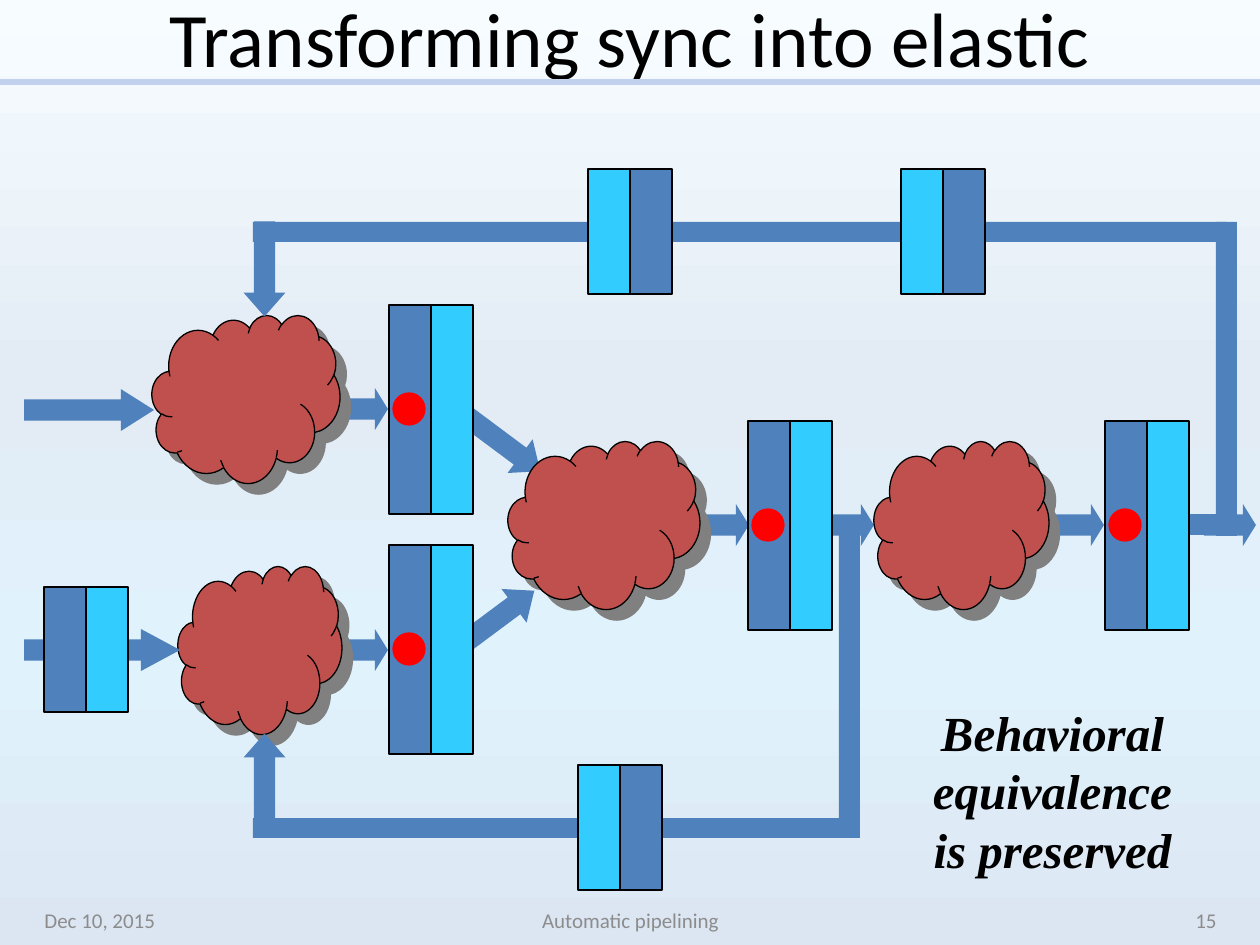
"""Build the slide on transforming a synchronous pipeline into an elastic one."""
from lxml.etree import SubElement
from pptx import Presentation
from pptx.dml.color import RGBColor
from pptx.enum.shapes import MSO_CONNECTOR, MSO_SHAPE as SHAPE
from pptx.enum.text import MSO_ANCHOR as ANCHOR, MSO_AUTO_SIZE as AUTO, PP_ALIGN as ALIGN
from pptx.oxml.ns import qn
from pptx.util import Pt

PX = 914400 / 126
COLORS = {"pipe": "4F81BD", "light": "33CCFF", "cloud": "C0504D", "token": "FF0000",
          "shadow": "808080", "rule": "C2D1ED", "text": "000000", "footer": "8C8C8C"}
BACKGROUND = [(0, "F7FDFF"), (40, "E3EBF5"), (70, "E0F3FC"), (100, "DCE6F2")]

TITLE = "Transforming sync into elastic"
CAPTION = ["Behavioral", "equivalence", "is preserved"]
FOOTERS = [("Dec 10, 2015", 32, 294, ALIGN.LEFT),
           ("Automatic pipelining", 431, 399, ALIGN.CENTER),
           ("15", 935, 294, ALIGN.RIGHT)]

ARROW_H = 42
# left, top, length, head length, rotation
STAGE_ARROWS = [(1052, 504, 52, 13, 0), (822, 504, 52, 13, 0), (697, 504, 52, 13, 0),
                (336, 629, 52, 13, 0), (336, 388, 52, 13, 0),
                (446, 599, 98, 25, -36.7), (452, 421, 98, 25, 36.7)]
OUTER_ARROWS = [(24, 389, 130, 33, 0), (24, 629, 156, 39, 0), (217, 248, 95, 24, 90),
                (217, 760, 95, 24, 270), (1204, 504, 52, 13, 0)]
CLOUD_H = 168
CLOUDS = [(152, 315, 188), (178, 566, 164), (874, 441, 175), (508, 441, 192)]
PIPES = [(1190, 514, 42, 21), (1216, 222, 21, 314), (253, 222, 973, 20),
         (839, 524, 21, 314), (253, 818, 606, 20)]

HALF_W, TALL, SHORT = 42, 209, 125
TOKEN, TOKEN_DX, TOKEN_DY = 32, 4, 88
FORWARD, BACKWARD = ("pipe", "light"), ("light", "pipe")
STAGE_REGISTERS = [(389, 305), (389, 545), (748, 421), (1105, 421)]
EMPTY_REGISTERS = [(901, 169, BACKWARD), (588, 169, BACKWARD),
                   (578, 765, BACKWARD), (44, 587, FORWARD)]


def emu(*lengths):
    return [round(n * PX) for n in lengths]


def rgb(name):
    return RGBColor.from_string(COLORS[name])


def add_shape(slide, kind, box, fill, line=None):
    s = slide.shapes.add_shape(kind, *emu(*box))
    s.shadow.inherit = False
    s.fill.solid()
    s.fill.fore_color.rgb = rgb(fill)
    if line:
        s.line.color.rgb = rgb(line)
        s.line.width = Pt(0.75)
    else:
        s.line.fill.background()
    return s


def add_arrow(slide, x, y, length, head, rotation):
    s = add_shape(slide, SHAPE.RIGHT_ARROW, (x, y, length, ARROW_H), "pipe")
    s.adjustments[1] = round(head / ARROW_H, 2)
    s.rotation = rotation


def add_cloud(slide, x, y, w):
    s = add_shape(slide, SHAPE.CLOUD, (x, y, w, CLOUD_H), "cloud", "text")
    effects = s._element.spPr.find(qn("a:effectLst"))
    shadow = SubElement(effects, qn("a:outerShdw"), dist=str(Pt(8.5)),
                        dir="2700000", algn="ctr", rotWithShape="0")
    SubElement(shadow, qn("a:srgbClr"), val=COLORS["shadow"])


def add_register(slide, x, y, h, fills):
    for i, fill in enumerate(fills):
        add_shape(slide, SHAPE.RECTANGLE, (x + i * HALF_W, y, HALF_W, h), fill, "text")


def style(p, size, color, font="Calibri", align=ALIGN.CENTER):
    p.alignment = align
    p.font.size = Pt(size)
    p.font.name = font
    p.font.color.rgb = rgb(color)


def place_title(slide):
    s = slide.shapes.title
    s.left, s.top, s.width, s.height = emu(63, 0, 1134, 73)
    tf = s.text_frame
    tf.text = TITLE
    tf.auto_size = AUTO.NONE
    tf.vertical_anchor = ANCHOR.MIDDLE
    style(tf.paragraphs[0], 44, "text")


def add_rule(slide):
    x1, y, x2 = emu(0, 82, 1260)
    s = slide.shapes.add_connector(MSO_CONNECTOR.STRAIGHT, x1, y, x2, y)
    s.line.color.rgb = rgb("rule")
    s.line.width = Pt(4)
    SubElement(s._element.spPr, qn("a:effectLst"))


def add_caption(slide):
    tf = slide.shapes.add_textbox(*emu(919, 696, 267, 190)).text_frame
    tf.word_wrap = False
    tf.auto_size = AUTO.SHAPE_TO_FIT_TEXT
    tf.text = "\n".join(CAPTION)
    for p in tf.paragraphs:
        style(p, 28, "text", "Times New Roman")
        p.font.bold = p.font.italic = True


def add_footer(slide, text, x, w, align):
    tf = slide.shapes.add_textbox(*emu(x, 895, w, 50)).text_frame
    tf.word_wrap = True
    tf.vertical_anchor = ANCHOR.MIDDLE
    tf.text = text
    style(tf.paragraphs[0], 12, "footer", align=align)


def paint_background(slide):
    fill = slide.background.fill
    fill.gradient()
    fill.gradient_angle = 270
    stops = next(slide._element.iter(qn("a:gsLst")))
    for stop in list(stops):
        stops.remove(stop)
    for pos, color in BACKGROUND:
        stop = SubElement(stops, qn("a:gs"), pos=str(pos * 1000))
        SubElement(stop, qn("a:srgbClr"), val=color)


def main():
    prs = Presentation()
    prs.slide_width, prs.slide_height = emu(1260, 945)
    slide = prs.slides.add_slide(prs.slide_layouts[5])
    paint_background(slide)
    add_rule(slide)
    place_title(slide)
    for arrow in STAGE_ARROWS:
        add_arrow(slide, *arrow)
    for cloud in CLOUDS:
        add_cloud(slide, *cloud)
    for pipe in PIPES:
        add_shape(slide, SHAPE.RECTANGLE, pipe, "pipe")
    for arrow in OUTER_ARROWS:
        add_arrow(slide, *arrow)
    for x, y in STAGE_REGISTERS:
        add_register(slide, x, y, TALL, FORWARD)
        token = (x + TOKEN_DX, y + TOKEN_DY, TOKEN, TOKEN)
        add_shape(slide, SHAPE.OVAL, token, "token", "token")
    for x, y, fills in EMPTY_REGISTERS:
        add_register(slide, x, y, SHORT, fills)
    add_caption(slide)
    for footer in FOOTERS:
        add_footer(slide, *footer)
    prs.save("out.pptx")


if __name__ == "__main__":
    main()
